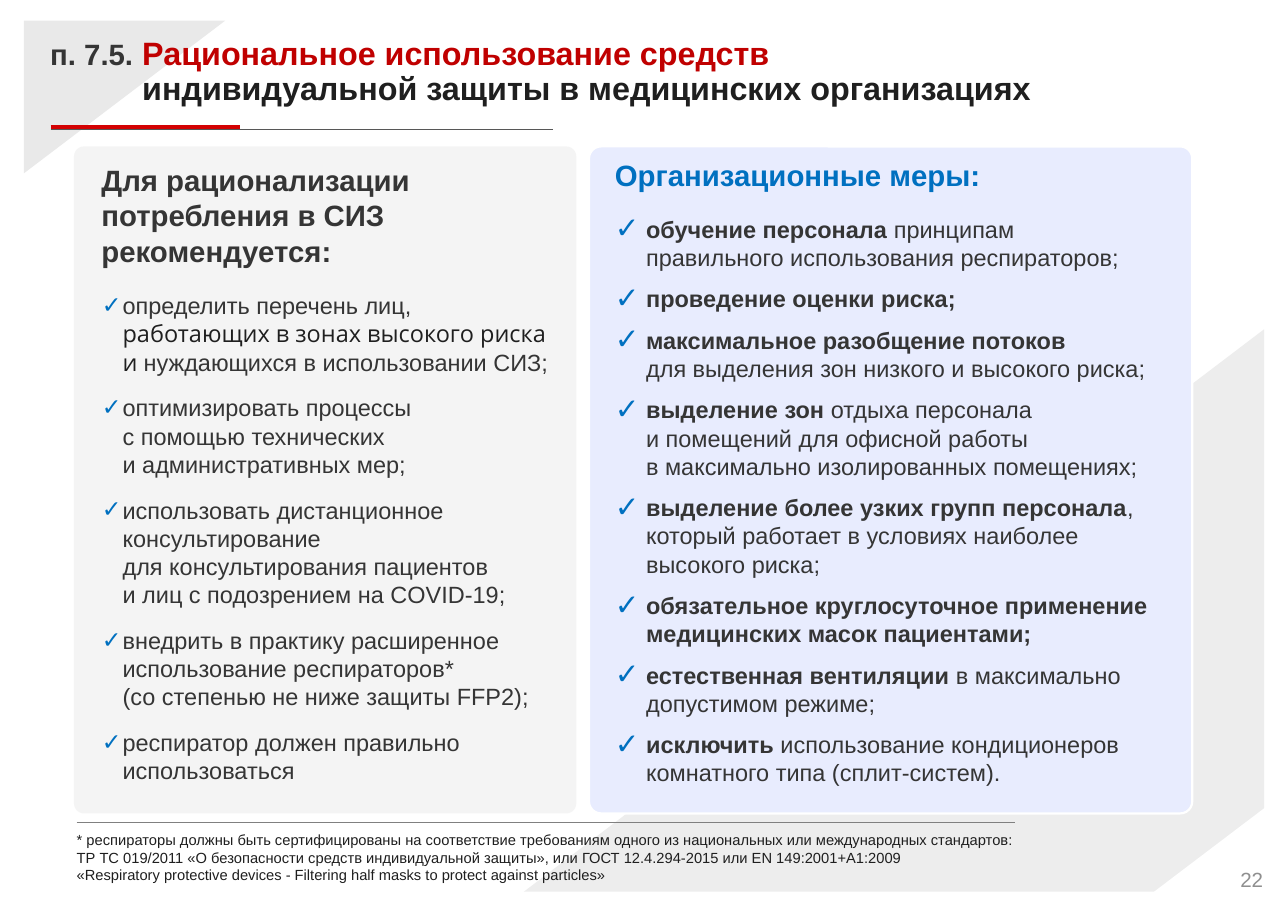
from lxml.etree import SubElement
from pptx import Presentation
from pptx.dml.color import RGBColor
from pptx.enum.shapes import MSO_CONNECTOR, MSO_SHAPE
from pptx.enum.text import MSO_AUTO_SIZE, PP_ALIGN
from pptx.oxml.ns import qn
from pptx.util import Pt

PAGE_WIDTH, PAGE_HEIGHT = Pt(1754), Pt(1241)
SCALE = 9144  # EMU per px, 100 px to the inch
DARK, BLACK, RED, BLUE = "353535", "1F1F1F", "C00000", "0070C0"

# left, top, width, height, rotation, colour
TRIANGLES = [
    (1159, 455, 1064, 1400, 270, "EDEDED"),
    (91, -7, 289, 381, 90, "E9E9E9"),
    (2177, 1460, 223, 294, 270, "FFFFFF"),
]
# left, right, height, colour, points
RULES = [
    (96, 1046, 245, "575757", 1.5),
    (96, 453, 240, "D30102", 5.75),
    (145, 1920, 1556, "808080", 1),
]
PANEL_TOP, PANEL_HEIGHT = 277, 1262

# A run is text, then bold, colour and font where they differ from the box
TITLE = [
    ("Рациональное использование средств\n", True, RED),
    ("индивидуальной защиты в медицинских организациях", True, BLACK),
]
LEFT_HEADING = "Для рационализации потребления в СИЗ рекомендуется:"
RECOMMENDATIONS = [
    [
        ("определить перечень лиц, ",),
        ("работающих в зонах высокого риска\nи ", False, BLACK, "Open Sans"),
        ("нуждающихся в использовании СИЗ;",),
    ],
    [("оптимизировать процессы\nс помощью технических\nи административных мер;",)],
    [("использовать дистанционное консультирование\n"
      "для консультирования пациентов\nи лиц с подозрением на COVID-19;",)],
    [("внедрить в практику расширенное использование респираторов*\n"
      "(со степенью не ниже защиты FFP2);",)],
    [("респиратор должен правильно использоваться",)],
]
RIGHT_HEADING = "Организационные меры:"
MEASURES = [
    [("обучение персонала ", True), ("принципам правильного использования респираторов;",)],
    [("проведение оценки риска;", True)],
    [("максимальное разобщение потоков\n", True),
     ("для выделения зон низкого и высокого риска;",)],
    [("выделение зон ", True),
     ("отдыха персонала\nи помещений для офисной работы\n"
      "в максимально изолированных помещениях;",)],
    [("выделение более узких групп персонала", True),
     (", который работает в условиях наиболее высокого риска;",)],
    [("обязательное круглосуточное применение медицинских масок пациентами;", True)],
    [("естественная вентиляции ", True), ("в максимально допустимом режиме;",)],
    [("исключить ", True), ("использование кондиционеров комнатного типа (сплит-систем).",)],
]
FOOTNOTE = (
    "* респираторы должны быть сертифицированы на соответствие требованиям "
    "одного из национальных или международных стандартов:\n"
    "ТР ТС 019/2011 «О безопасности средств индивидуальной защиты», "
    "или ГОСТ 12.4.294-2015 или EN 149:2001+А1:2009\n"
    "«Respiratory protective devices - Filtering half masks to protect against particles»"
)


def px(*lengths):
    return [length * SCALE for length in lengths]


def color(value):
    return RGBColor.from_string(value)


def add_filled(page, kind, frame, fill):
    shape = page.shapes.add_shape(kind, *px(*frame))
    shape.shadow.inherit = False
    shape.fill.solid()
    shape.fill.fore_color.rgb = color(fill)
    shape.line.fill.background()
    return shape


def add_panel(page, left, width, fill):
    frame = (left, PANEL_TOP, width, PANEL_HEIGHT)
    panel = add_filled(page, MSO_SHAPE.ROUNDED_RECTANGLE, frame, fill)
    panel.adjustments[0] = 0.02
    return panel


def add_rule(page, left, right, top, stroke, points):
    rule = page.shapes.add_connector(MSO_CONNECTOR.STRAIGHT, *px(left, top, right, top))
    rule.line.color.rgb = color(stroke)
    rule.line.width = Pt(points)
    SubElement(rule._element.spPr, qn("a:effectLst"))


def add_box(page, left, top, width, height, inset=True):
    box = page.shapes.add_textbox(*px(left, top, width, height))
    frame = box.text_frame
    frame.word_wrap = True
    frame.auto_size = MSO_AUTO_SIZE.SHAPE_TO_FIT_TEXT
    if not inset:
        frame.margin_left = frame.margin_right = 0
        frame.margin_top = frame.margin_bottom = 0
    return frame


def add_run(para, size, text, bold=False, ink=DARK, font="Arial"):
    """Add text to a paragraph, with a line break at each newline."""
    for number, line in enumerate(text.split("\n")):
        if number:
            para.add_line_break()
        if line:
            span = para.add_run()
            span.text = line
            span.font.size = Pt(size)
            span.font.bold = bold
            span.font.name = font
            span.font.color.rgb = color(ink)


def add_check_mark(para, indent, percent):
    props = para._p.get_or_add_pPr()
    props.set("marL", str(indent * SCALE))
    props.set("indent", str(-indent * SCALE))
    SubElement(SubElement(props, qn("a:buClr")), qn("a:srgbClr"), val=BLUE)
    SubElement(props, qn("a:buSzPct"), val=str(percent * 1000))
    SubElement(props, qn("a:buFont"), typeface="Arial")
    SubElement(props, qn("a:buChar"), char="✓")


def add_checklist(frame, items, indent, percent, gap):
    """Fill a box with ticked items, after its heading if it has one."""
    for item in items:
        first = not frame.paragraphs[0].runs
        para = frame.paragraphs[0] if first else frame.add_paragraph()
        add_check_mark(para, indent, percent)
        if not first:
            para.space_before = Pt(gap)
        for run in item:
            add_run(para, 32, *run)


def add_text(page, frame, size, runs, spacing=None):
    para = add_box(page, *frame, inset=False).paragraphs[0]
    if spacing:
        para.line_spacing = spacing
    for run in runs:
        add_run(para, size, *run)
    return para


def main():
    deck = Presentation()
    deck.slide_width = PAGE_WIDTH
    deck.slide_height = PAGE_HEIGHT
    page = deck.slides.add_slide(deck.slide_layouts[6])

    for *frame, rotation, fill in TRIANGLES:
        triangle = add_filled(page, MSO_SHAPE.RIGHT_TRIANGLE, frame, fill)
        triangle.rotation = rotation
    for rule in RULES:
        add_rule(page, *rule)

    add_text(page, (95, 76, 160, 61), 40, [("п. 7.5.", True)], 0.9)
    add_text(page, (269, 71, 1801, 133), 44, TITLE, 0.9)

    left_panel = add_panel(page, 140, 950, "F2F2F2")
    fill_color = left_panel.fill._xPr.find(qn("a:solidFill"))[0]
    SubElement(fill_color, qn("a:alpha"), val="80000")
    heading = add_box(page, 182, 302, 841, 212).paragraphs[0]
    add_run(heading, 40, LEFT_HEADING, True)
    add_checklist(add_box(page, 183, 546, 874, 953), RECOMMENDATIONS, 39, 100, 24)

    right_panel = add_panel(page, 1114, 1141, "E8ECFE")
    right_panel.line.color.rgb = color("FFFFFF")
    right_panel.line.width = Pt(3)
    measures = add_box(page, 1151, 293, 1049, 1212)
    measures.margin_left = 12 * SCALE
    measures.paragraphs[0].space_after = Pt(12)
    add_run(measures.paragraphs[0], 40, RIGHT_HEADING, True, BLUE)
    add_checklist(measures, MEASURES, 59, 125, 18)

    add_text(page, (145, 1572, 1965, 97), 20, [(FOOTNOTE, False, BLACK)])
    number = add_text(page, (2289, 1640, 100, 47), 28, [("22", False, "8F8F8F")])
    number.alignment = PP_ALIGN.RIGHT

    deck.save("out.pptx")


if __name__ == "__main__":
    main()
